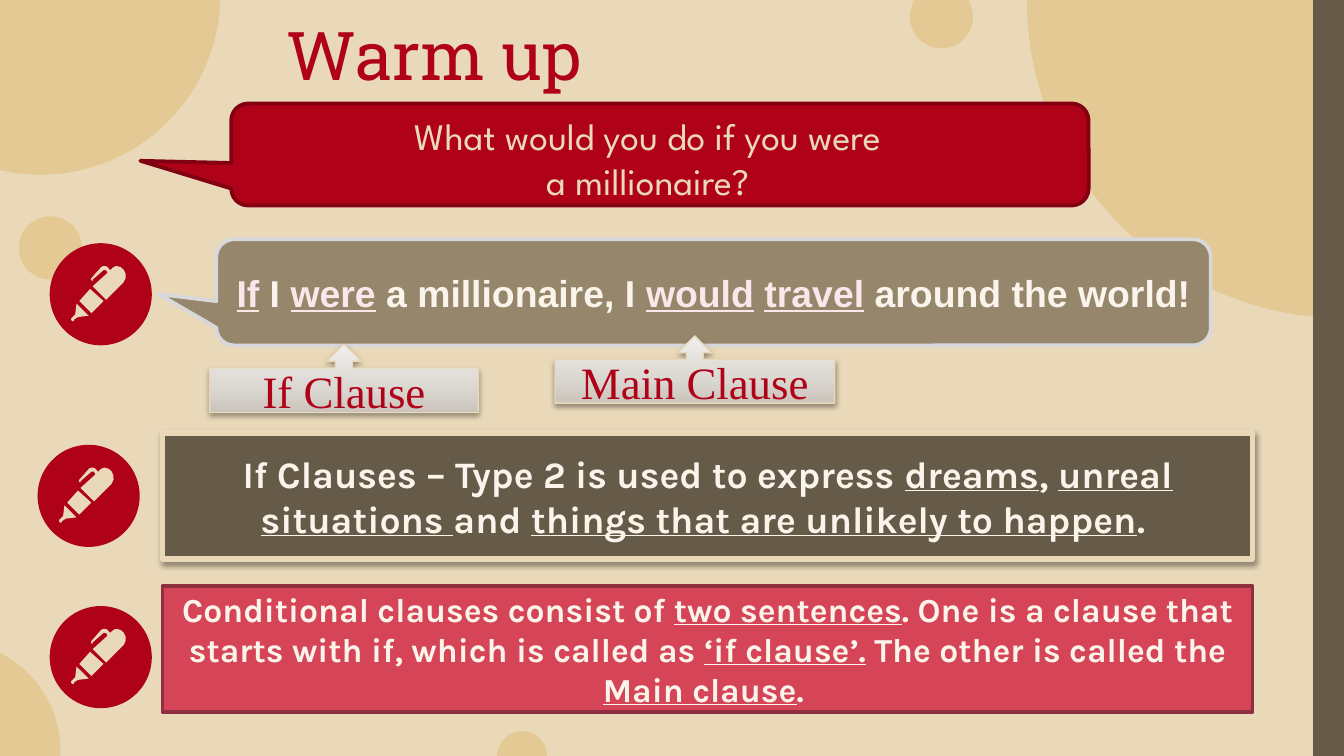
import copy

import pptx
import pptx.dml.color
import pptx.enum.shapes
import pptx.enum.text
import pptx.oxml
import pptx.oxml.ns
import pptx.util

Inches, Pt = pptx.util.Inches, pptx.util.Pt
RGB = pptx.dml.color.RGBColor.from_string
SHAPE = pptx.enum.shapes.MSO_SHAPE
ANCHOR = pptx.enum.text.MSO_ANCHOR

WIDTH = 10
HEIGHT = WIDTH * 9 / 16
C = {
    "sand": "EAD9B9", "gold": "E4C994", "brown": "665A49", "taupe": "96876C",
    "red": "AF0118", "dark_red": "810112", "silver": "D8D8DB", "rose": "FDE6E9",
    "cream": "FAF4EA", "pink": "D64457", "wine": "8F3040",
}
CLAUSE_STOPS = [(0, "CBC4BC"), (0.35, "DAD6D0"), (1, "F1EFED")]
SHADOW = (
    '<a:effectLst %s><a:outerShdw blurRad="39370" dist="20320" dir="5400000" rotWithShape="0">'
    '<a:srgbClr val="000000"><a:alpha val="38000"/></a:srgbClr></a:outerShdw></a:effectLst>'
    % pptx.oxml.ns.nsdecls("a")
)

# Pen outline, measured from the badge corner: 2 numbers are a line, 6 a curve
PEN = [
    [(0.2, 0.45), (0.19, 0.53), (0.16, 0.56), (0.16, 0.56, 0.16, 0.58, 0.17, 0.58),
     (0.18, 0.58, 0.18, 0.58, 0.18, 0.57), (0.21, 0.55), (0.29, 0.54)],
    [(0.3, 0.34), (0.22, 0.43), (0.31, 0.52), (0.4, 0.43)],
    [(0.41, 0.17), (0.4, 0.17, 0.39, 0.17, 0.38, 0.18), (0.31, 0.26),
     (0.3, 0.27, 0.31, 0.28, 0.32, 0.28), (0.32, 0.28, 0.32, 0.28, 0.32, 0.27),
     (0.4, 0.2), (0.41, 0.2), (0.42, 0.2), (0.43, 0.22), (0.32, 0.32), (0.42, 0.42),
     (0.55, 0.29), (0.59, 0.24, 0.55, 0.17, 0.5, 0.17),
     (0.48, 0.17, 0.47, 0.18, 0.45, 0.2), (0.43, 0.18, 0.43, 0.17, 0.41, 0.17)],
]


def add_shape(shapes, kind, box, fill, line=None, width=0, adj=()):
    sp = shapes.add_shape(kind, *[Inches(v) for v in box])
    sp.shadow.inherit = False
    sp.fill.solid()
    sp.fill.fore_color.rgb = RGB(C[fill])
    if line:
        sp.line.color.rgb = RGB(C[line])
        sp.line.width = Pt(width)
    else:
        sp.line.fill.background()
    for i, value in enumerate(adj):
        sp.adjustments[i] = value
    return sp


def write(sp, runs, size, font, bold=False, anchor=ANCHOR.MIDDLE):
    tf = sp.text_frame
    tf.word_wrap = True
    tf.auto_size = pptx.enum.text.MSO_AUTO_SIZE.NONE
    tf.vertical_anchor = anchor
    p = tf.paragraphs[0]
    p.alignment = pptx.enum.text.PP_ALIGN.CENTER
    for i, (text, color, underline) in enumerate(runs):
        if i == 0:
            p.text = text
        else:
            p.add_run().text = text
        for r in p.runs[i:]:
            r.font.size, r.font.name = Pt(size), font
            r.font.bold, r.font.underline = bold, underline
            r.font.color.rgb = RGB(C[color])


prs = pptx.Presentation()
prs.slide_width, prs.slide_height = Inches(WIDTH), Inches(HEIGHT)
s = prs.slides.add_slide(prs.slide_layouts[5])
s.background.fill.solid()
s.background.fill.fore_color.rgb = RGB(C["sand"])

# Background dots, corner quadrant and side bar
for x, y, d in [(3.7, 5.44, 0.37), (6.77, -0.11, 0.47), (-1.04, -1.38, 2.68),
                (-1.19, 4.77, 1.64), (0.14, 1.61, 0.47)]:
    add_shape(s.shapes, SHAPE.OVAL, (x, y, d, d), "gold")
add_shape(s.shapes, SHAPE.PIE, (7.64, -2.38, 4.75, 4.75), "gold", adj=(54, 108))
add_shape(s.shapes, SHAPE.RECTANGLE, (9.77, 0, 0.23, HEIGHT), "brown")

# Title
title = s.shapes.title
title.left, title.top = Inches(1.77), Inches(0.14)
title.width, title.height = Inches(2.92), Inches(0.52)
write(title, [("Warm up", "red", False)], 36, "Roboto Slab")

# Question bubble
add_shape(s.shapes, SHAPE.ROUNDED_RECTANGULAR_CALLOUT, (1.72, 0.77, 6.38, 0.76),
          "red", "dark_red", 2, (-0.606, 0.062, 0.167))
question = s.shapes.add_textbox(Inches(1.71), Inches(0.74), Inches(6.22), Inches(0.98))
question.text_frame.margin_top = Inches(0.1)
write(question, [("What would you do if you were\va millionaire?", "sand", False)],
      20, "League Spartan", anchor=ANCHOR.TOP)

# Example bubble
example = add_shape(s.shapes, SHAPE.ROUNDED_RECTANGULAR_CALLOUT, (1.61, 1.78, 7.4, 0.79),
                    "taupe", "silver", 2, (-0.558, 0.018, 0.167))
write(example, [
    ("If", "rose", True), (" I ", "cream", False), ("were", "rose", True),
    (" a millionaire, I ", "cream", False), ("would", "rose", True), (" ", "cream", False),
    ("travel", "rose", True), (" around the world!", "cream", False),
], 20, "Arial", bold=True)

# Rule boxes: every second run is underlined
rules = [
    (3.22, "brown", "sand", 3, 20,
     ["If Clauses – Type 2 is used to express ", "dreams", ", ", "unreal situations ",
      "and ", "things that are unlikely to happen", ". "]),
    (4.36, "pink", "wine", 2, 18,
     ["Conditional clauses consist of ", "two sentences",
      ". One is a clause that starts with if, which is called as ", "‘if clause’.",
      " The other is called the ", "Main clause", ". "]),
]
for y, fill, line, width, size, parts in rules:
    sp = add_shape(s.shapes, SHAPE.RECTANGLE, (1.21, y, 8.11, 0.94), fill, line, width)
    write(sp, [(t, "cream", i % 2 == 1) for i, t in enumerate(parts)], size, "Karla", bold=True)
    if fill == "brown":
        spPr = sp._element.spPr
        spPr.replace(spPr.find(pptx.oxml.ns.qn("a:effectLst")), pptx.oxml.parse_xml(SHADOW))

# Pen badges
for x, y in [(0.37, 1.81), (0.28, 3.31), (0.37, 4.51)]:
    badge = s.shapes.add_group_shape()
    add_shape(badge.shapes, SHAPE.OVAL, (x, y, 0.76, 0.76), "red")
    for outline in PEN:
        pts = [outline[0]]
        for seg in outline[1:]:
            if len(seg) == 2:
                pts.append(seg)
                continue
            curve = [pts[-1], seg[:2], seg[2:4], seg[4:]]
            for t in (0.2, 0.4, 0.6, 0.8, 1):
                weights = ((1 - t) ** 3, 3 * t * (1 - t) ** 2, 3 * t * t * (1 - t), t ** 3)
                pts.append(tuple(sum(w * q[k] for w, q in zip(weights, curve)) for k in (0, 1)))
        pts = [(Inches(x + px), Inches(y + py)) for px, py in pts]
        fb = badge.shapes.build_freeform(*pts[0])
        fb.add_line_segments(pts[1:], close=True)
        sp = fb.convert_to_shape()
        sp.shadow.inherit = False
        sp.fill.solid()
        sp.fill.fore_color.rgb = RGB(C["sand"])
        sp.line.fill.background()

# Clause labels pointing up at the example
for box, label in [((4.13, 2.5, 2.08, 0.5), "Main Clause"), ((1.56, 2.56, 2, 0.51), "If Clause")]:
    sp = add_shape(s.shapes, SHAPE.UP_ARROW_CALLOUT, box, "silver", "sand", 0.75)
    sp.fill.gradient()
    sp.fill.gradient_angle = 90
    spPr = sp._element.spPr
    gsLst = spPr.find(".//" + pptx.oxml.ns.qn("a:gsLst"))
    gsLst.append(copy.deepcopy(gsLst[-1]))
    for stop, (position, color) in zip(sp.fill.gradient_stops, CLAUSE_STOPS):
        stop.position = position
        stop.color.rgb = RGB(color)
    spPr.replace(spPr.find(pptx.oxml.ns.qn("a:effectLst")), pptx.oxml.parse_xml(SHADOW))
    write(sp, [(label, "red", False)], 24, "Times New Roman")

prs.save("out.pptx")
